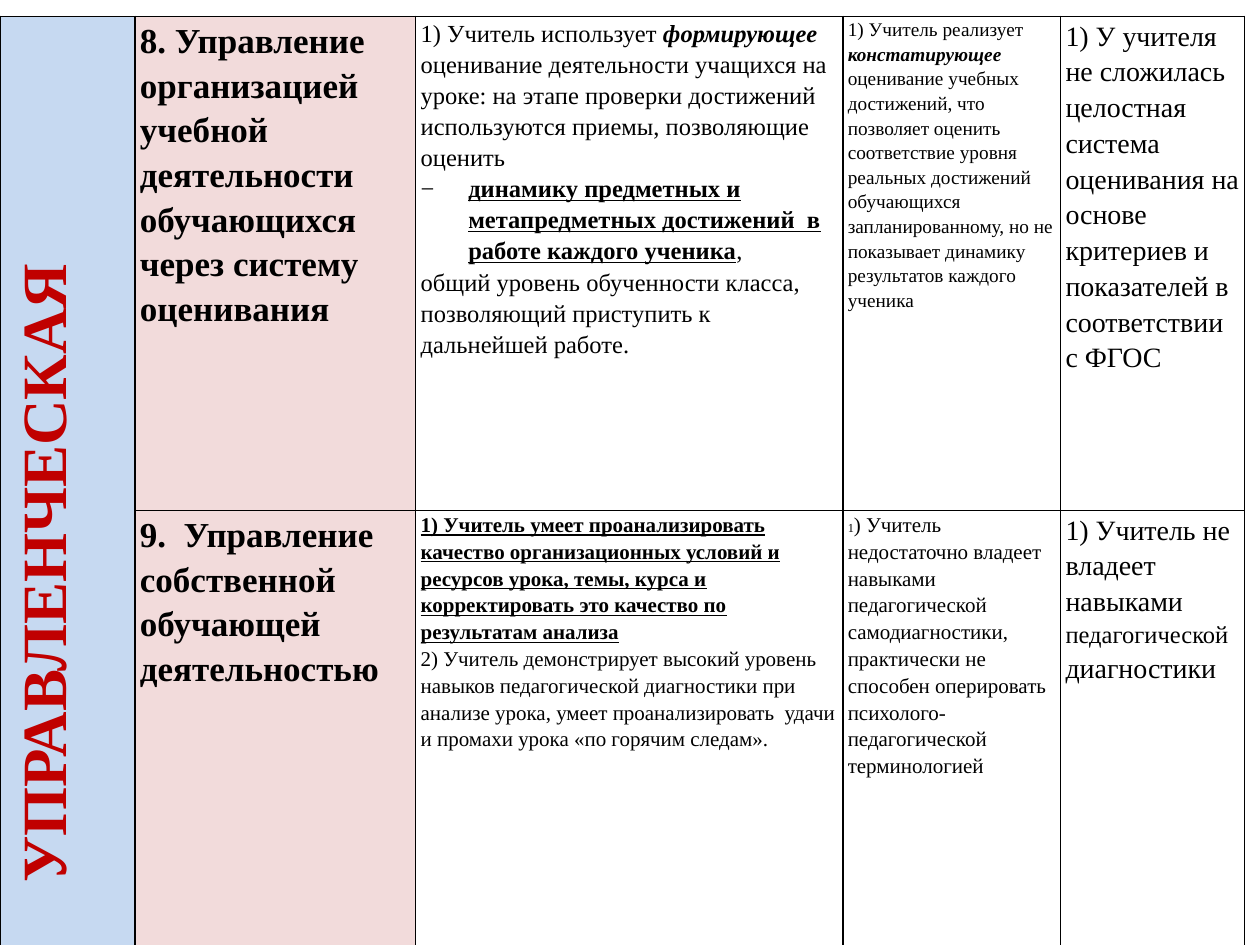
from dataclasses import dataclass

from lxml.etree import SubElement as Sub
from pptx import Presentation as Deck
from pptx.dml.color import RGBColor as Color
from pptx.enum.text import MSO_ANCHOR as Anchor, PP_ALIGN as Align
from pptx.oxml import parse_xml
from pptx.oxml.ns import nsdecls, qn
from pptx.util import Cm, Pt


@dataclass(frozen=True)
class Theme:
    font: str = "Times New Roman"
    ink: str = "000000"
    red: str = "C00000"
    blue: str = "C6D9F1"
    pink: str = "F2DBDB"
    white: str = "FFFFFF"
    side: int = 36
    head: int = 20
    large: int = 16
    body: int = 14
    small: int = 12
    fine: int = 11
    tiny: int = 7
    lead: float = 1.15
    rule: float = 1


THEME = Theme()
COLS = (2.72, 5.66, 8.61, 4.39, 3.71)
ROWS = (9.96, 8.76)
BOX = (0, 0.33, sum(COLS), sum(ROWS))
SIDE = "УПРАВЛЕНЧЕСКАЯ"
T = THEME

ITEMS = (
    (
        [[("8. Управление организацией учебной деятельности обучающихся через систему оценивания", T.head, "b")]],
        [
            [
                ("1) Учитель использует ", T.body, ""),
                ("формирующее", T.body, "bi"),
                (" оценивание деятельности учащихся на уроке: на этапе проверки достижений "
                 "используются приемы, позволяющие оценить", T.body, ""),
            ],
            [
                ("динамику предметных и метапредметных достижений  в работе каждого ученика", T.body, "bu"),
                (",", T.body, ""),
            ],
            [("общий уровень обученности класса, позволяющий приступить к дальнейшей работе.", T.body, "")],
        ],
        [[
            ("1) Учитель реализует ", T.fine, ""),
            ("констатирующее ", T.fine, "bi"),
            ("оценивание учебных достижений, что  позволяет оценить соответствие уровня реальных "
             "достижений  обучающихся запланированному, но не показывает динамику результатов "
             "каждого ученика", T.fine, ""),
        ]],
        [[("1) У учителя не сложилась целостная система оценивания на основе критериев и показателей "
           "в соответствии с ФГОС", T.large, "")]],
    ),
    (
        [[("9.  Управление собственной обучающей деятельностью", T.head, "b")]],
        [
            [("1) Учитель умеет проанализировать качество организационных условий и ресурсов урока, "
              "темы, курса и корректировать это качество по результатам анализа", T.small, "bu")],
            [("2) Учитель демонстрирует высокий уровень навыков педагогической диагностики при  анализе "
              "урока, умеет проанализировать  удачи и промахи урока «по горячим следам».", T.small, "")],
        ],
        [[
            ("1", T.tiny, ""),
            (") Учитель недостаточно владеет навыками педагогической самодиагностики, практически "
             "не способен оперировать психолого-педагогической терминологией", T.small, ""),
        ]],
        [[
            ("1) Учитель не владеет навыками ", T.large, ""),
            ("педагогической ", T.body, ""),
            ("диагностики", T.large, ""),
        ]],
    ),
)


def add_run(para, text, size, marks="", tint=THEME.ink):
    run = para.add_run()
    run.text = text
    font = run.font
    font.name, font.size = THEME.font, Pt(size)
    font.bold, font.italic = "b" in marks, "i" in marks
    font.underline = "u" in marks
    font.color.rgb = Color.from_string(tint)


def add_dash(para):
    props = para._p.get_or_add_pPr()
    props.set("marL", str(Cm(0.96)))
    props.set("indent", str(-Cm(0.96)))
    Sub(props, qn("a:buFont")).set("typeface", THEME.font)
    Sub(props, qn("a:buChar")).set("char", "−")


def style(cell, tint):
    cell.margin_left = cell.margin_right = Cm(0.1)
    cell.margin_top = cell.margin_bottom = 0
    cell.fill.solid()
    cell.fill.fore_color.rgb = Color.from_string(tint)
    props = cell._tc.get_or_add_tcPr()
    for spot, edge in enumerate("LRTB"):
        props.insert(spot, parse_xml(
            f'<a:ln{edge} {nsdecls("a")} w="{Pt(THEME.rule)}"><a:solidFill>'
            f'<a:srgbClr val="{THEME.ink}"/></a:solidFill></a:ln{edge}>'))


def fill_cell(cell, paras):
    frame = cell.text_frame
    for spot, runs in enumerate(paras):
        para = frame.add_paragraph() if spot else frame.paragraphs[0]
        para.line_spacing = THEME.lead
        if runs[0][0].startswith("динамику"):
            add_dash(para)
        for run in runs:
            add_run(para, *run)


def fill_side(cell):
    cell._tc.get_or_add_tcPr().set("vert", "vert270")
    cell.vertical_anchor = Anchor.MIDDLE
    para = cell.text_frame.paragraphs[0]
    para.alignment = Align.CENTER
    para.line_spacing = THEME.lead
    add_run(para, SIDE, THEME.side, "b", THEME.red)


def add_grid(slide, box):
    left, top, width, height = box
    grid = slide.shapes.add_table(
        len(ROWS), len(COLS), Cm(left), Cm(top), Cm(width), Cm(height)).table
    for col, share in zip(grid.columns, COLS):
        col.width = Cm(width * share / sum(COLS))
    for row, share in zip(grid.rows, ROWS):
        row.height = Cm(height * share / sum(ROWS))
    tints = (THEME.blue, THEME.pink) + (THEME.white,) * 3
    for r, item in enumerate(ITEMS):
        for c, tint in enumerate(tints):
            style(grid.cell(r, c), tint)
        for c, paras in enumerate(item, 1):
            fill_cell(grid.cell(r, c), paras)
    grid.cell(0, 0).merge(grid.cell(len(ROWS) - 1, 0))
    fill_side(grid.cell(0, 0))


def main():
    deck = Deck()
    deck.slide_width, deck.slide_height = Cm(25.4), Cm(19.05)
    slide = deck.slides.add_slide(deck.slide_layouts[6])
    add_grid(slide, BOX)
    deck.save("out.pptx")


if __name__ == "__main__":
    main()
